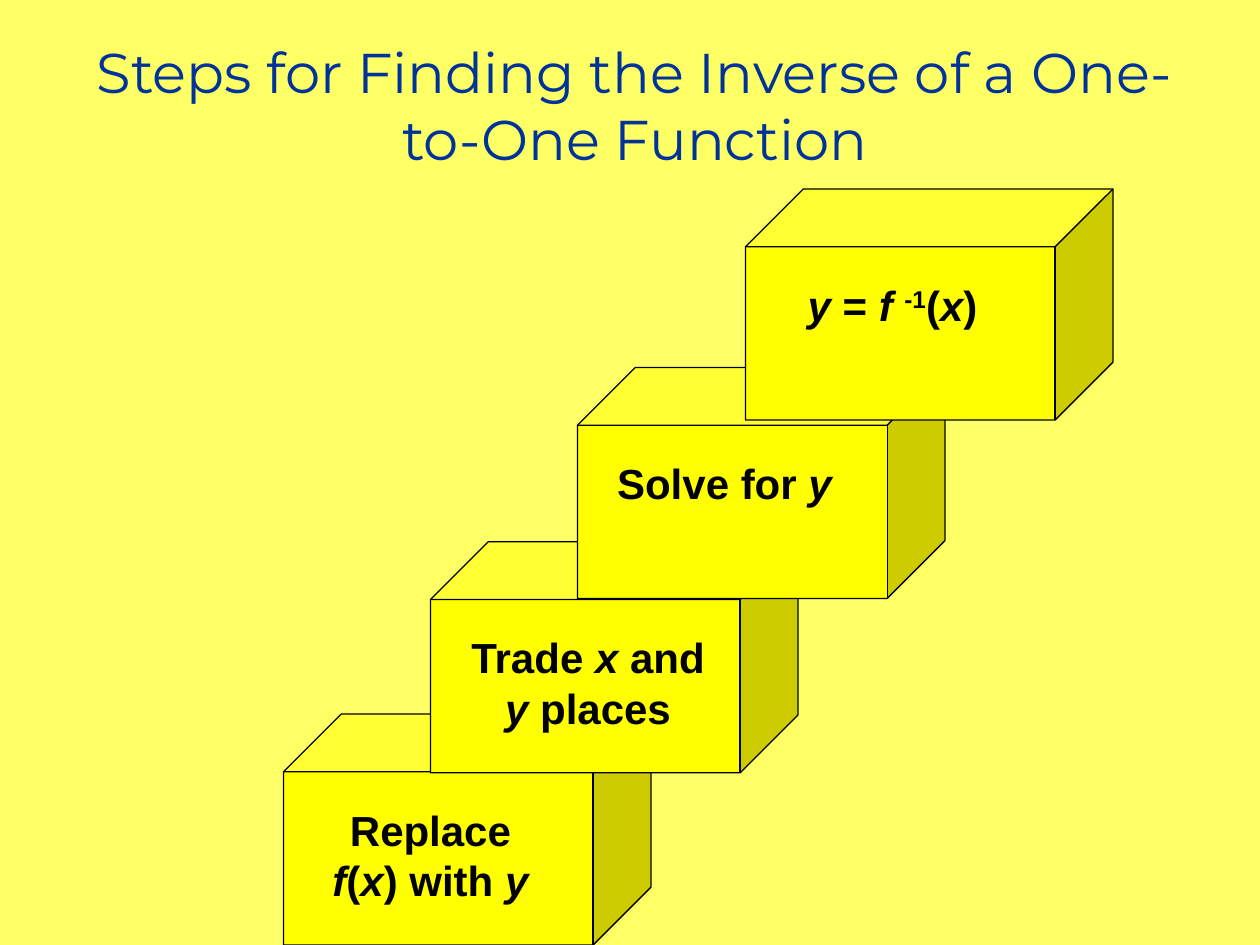
from dataclasses import dataclass

from pptx import Presentation
from pptx.dml.color import RGBColor
from pptx.enum.shapes import MSO_SHAPE
from pptx.enum.text import PP_ALIGN
from pptx.util import Pt

CUBE = MSO_SHAPE.CUBE
CENTER = PP_ALIGN.CENTER
PX = 7620
SUPERSCRIPT = "30000"

CUBE_W, CUBE_H = 350, 220
LABEL_DX, LABEL_DY = 20, 80


@dataclass
class Span:
    text: str
    italic: bool = False
    raised: bool = False


@dataclass
class Step:
    x: int
    y: int
    label_w: int
    label_h: int
    spans: list[Span]


STEPS = [
    Step(270, 680, 240, 108, [
        Span("Replace "), Span("f", True), Span("("), Span("x", True),
        Span(") with "), Span("y", True)]),
    Step(410, 516, 260, 108, [
        Span("Trade "), Span("x ", True), Span("and "), Span("y", True),
        Span(" places")]),
    Step(550, 350, 240, 60, [Span("Solve for "), Span("y", True)]),
    Step(710, 180, 240, 60, [
        Span("y", True), Span(" = "), Span("f ", True),
        Span("-1", raised=True), Span("("), Span("x", True), Span(")")]),
]


def px(n: int) -> int:
    return n * PX


def rgb(value: str) -> RGBColor:
    return RGBColor.from_string(value)


def add_text(shapes, x: int, y: int, w: int, h: int, spans: list[Span],
             font: str, size: int, color: str, bold: bool = False) -> None:
    tf = shapes.add_textbox(px(x), px(y), px(w), px(h)).text_frame
    tf.word_wrap = True
    p = tf.paragraphs[0]
    p.alignment = CENTER
    p.font.name = font
    p.font.size = Pt(size)
    p.font.bold = bold
    p.font.color.rgb = rgb(color)
    for span in spans:
        r = p.add_run()
        r.text = span.text
        if span.italic:
            r.font.italic = True
        if span.raised:
            r._r.get_or_add_rPr().set("baseline", SUPERSCRIPT)


def add_step(s, step: Step) -> None:
    shapes = s.shapes.add_group_shape().shapes
    cube = shapes.add_shape(CUBE, px(step.x), px(step.y),
                            px(CUBE_W), px(CUBE_H))
    cube.adjustments[0] = 0.25
    cube.shadow.inherit = False
    cube.fill.solid()
    cube.fill.fore_color.rgb = rgb("FFFF00")
    cube.line.color.rgb = rgb("000000")
    cube.line.width = Pt(0.75)
    add_text(shapes, step.x + LABEL_DX, step.y + LABEL_DY,
             step.label_w, step.label_h, step.spans,
             "Arial", 24, "000000", bold=True)


def main() -> None:
    prs = Presentation()
    prs.slide_width, prs.slide_height = px(1200), px(900)
    s = prs.slides.add_slide(prs.slide_layouts[6])
    s.background.fill.solid()
    s.background.fill.fore_color.rgb = rgb("FFFF66")
    title = Span("Steps for Finding the Inverse of a One-to-One Function")
    add_text(s.shapes, 60, 30, 1090, 140, [title], "Montserrat", 32, "003399")
    for step in STEPS:
        add_step(s, step)
    prs.save("out.pptx")


if __name__ == "__main__":
    main()
